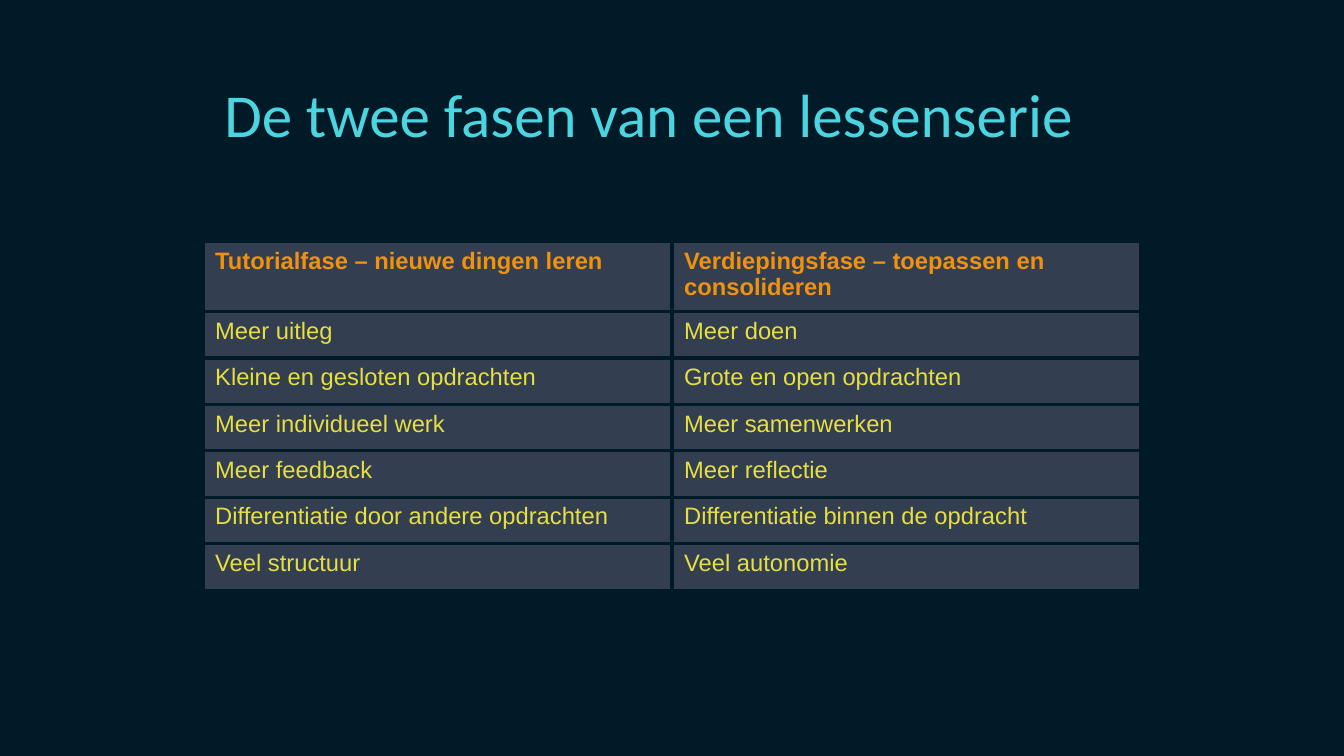
from lxml import etree
from pptx import Presentation
from pptx.dml.color import RGBColor
from pptx.enum import text as t
from pptx.oxml import ns
from pptx.util import Pt

TITLE = "De twee fasen van een lessenserie"
PHASES = [
    ("Tutorialfase – nieuwe dingen leren", "Verdiepingsfase – toepassen en consolideren"),
    ("Meer uitleg", "Meer doen"),
    ("Kleine en gesloten opdrachten", "Grote en open opdrachten"),
    ("Meer individueel werk", "Meer samenwerken"),
    ("Meer feedback", "Meer reflectie"),
    ("Differentiatie door andere opdrachten", "Differentiatie binnen de opdracht"),
    ("Veel structuur", "Veel autonomie"),
]

NIGHT = RGBColor(0x01, 0x1A, 0x27)
SLATE = RGBColor(0x33, 0x3F, 0x50)
CYAN = RGBColor(0x4A, 0xD5, 0xE1)
ORANGE = RGBColor(0xF0, 0x91, 0x0F)
YELLOW = RGBColor(0xE6, 0xDF, 0x44)

SLIDE_WIDTH, SLIDE_HEIGHT = 793.5, 446.4
COLUMN_WIDTH = 276.9
HEADER_HEIGHT, ROW_HEIGHT = 41.3, 27.45
TABLE_TOP = 142.6
BORDER = 2.25


def write(frame, text, *, size, color, font="Arial", bold=False):
    para = frame.paragraphs[0]
    para.alignment = t.PP_ALIGN.LEFT
    span = para.add_run()
    span.text = text
    span.font.name = font
    span.font.size = Pt(size)
    span.font.bold = bold
    span.font.color.rgb = color


def add_borders(cell):
    """Draw all four cell edges in the background colour."""
    properties = cell._tc.get_or_add_tcPr()
    for index, edge in enumerate(("lnL", "lnR", "lnT", "lnB")):
        line = etree.Element(ns.qn("a:" + edge), w=str(Pt(BORDER)))
        fill = etree.SubElement(line, ns.qn("a:solidFill"))
        etree.SubElement(fill, ns.qn("a:srgbClr"), val=str(NIGHT))
        properties.insert(index, line)


def add_title(page):
    box = page.shapes.title
    box.left, box.top, box.width, box.height = Pt(132.5), Pt(44.6), Pt(529.2), Pt(44)
    frame = box.text_frame
    frame.margin_left = frame.margin_right = frame.margin_top = frame.margin_bottom = 0
    frame.vertical_anchor = t.MSO_ANCHOR.MIDDLE
    frame.word_wrap = True
    frame.auto_size = t.MSO_AUTO_SIZE.SHAPE_TO_FIT_TEXT
    write(frame, TITLE, size=36, color=CYAN, font="Calibri")


def add_phases(page):
    columns = len(PHASES[0])
    width = columns * COLUMN_WIDTH
    height = HEADER_HEIGHT + (len(PHASES) - 1) * ROW_HEIGHT
    left = (SLIDE_WIDTH - width) / 2
    table = page.shapes.add_table(
        len(PHASES), columns, Pt(left), Pt(TABLE_TOP), Pt(width), Pt(height)
    ).table
    for column in table.columns:
        column.width = Pt(COLUMN_WIDTH)
    for row_index, texts in enumerate(PHASES):
        header = row_index == 0
        table.rows[row_index].height = Pt(HEADER_HEIGHT if header else ROW_HEIGHT)
        for column_index, text in enumerate(texts):
            cell = table.cell(row_index, column_index)
            cell.fill.solid()
            cell.fill.fore_color.rgb = SLATE
            add_borders(cell)
            write(cell.text_frame, text, size=14, bold=header,
                  color=ORANGE if header else YELLOW)


def main():
    deck = Presentation()
    deck.slide_width, deck.slide_height = Pt(SLIDE_WIDTH), Pt(SLIDE_HEIGHT)
    page = deck.slides.add_slide(deck.slide_layouts.get_by_name("Title Only"))
    page.background.fill.solid()
    page.background.fill.fore_color.rgb = NIGHT
    add_title(page)
    add_phases(page)
    deck.save("out.pptx")


if __name__ == "__main__":
    main()
